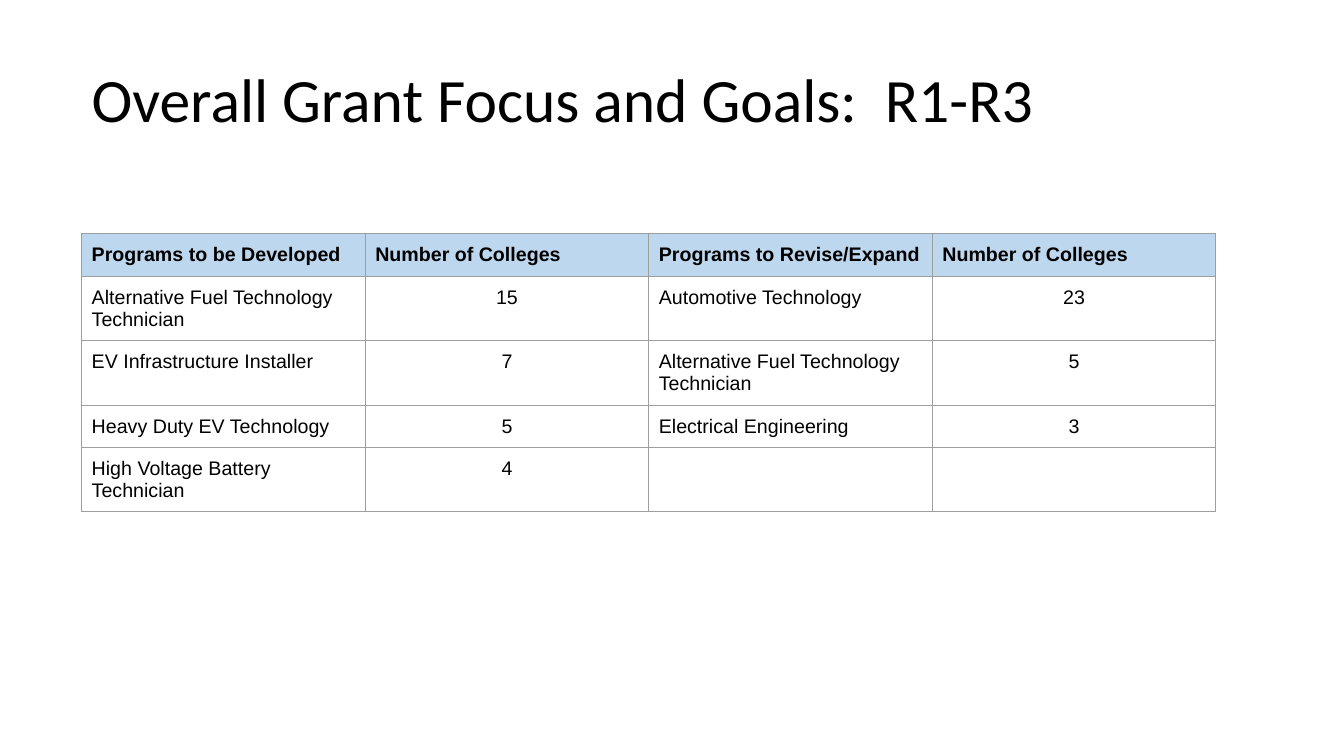
"""Build the grant goals slide: a title above a table of programs."""
from lxml.etree import SubElement
from pptx import Presentation
from pptx.dml.color import RGBColor
from pptx.enum.text import MSO_ANCHOR as Anchor, PP_ALIGN as Align
from pptx.oxml.ns import qn
from pptx.util import Inches, Pt

TITLE = "Overall Grant Focus and Goals:  R1-R3"
ROWS = [
    ("Programs to be Developed", "Number of Colleges",
     "Programs to Revise/Expand", "Number of Colleges"),
    ("Alternative Fuel Technology Technician", "15", "Automotive Technology", "23"),
    ("EV Infrastructure Installer", "7", "Alternative Fuel Technology Technician", "5"),
    ("Heavy Duty EV Technology", "5", "Electrical Engineering", "3"),
    ("High Voltage Battery Technician", "4", "", ""),
]
HEIGHTS = (0.42, 0.64, 0.64, 0.42, 0.64)
LEFT, TOP, WIDTH = 0.81, 2.32, 11.25
BLACK = RGBColor(0x00, 0x00, 0x00)
BLUE = RGBColor(0xBD, 0xD7, 0xEE)
GRAY = RGBColor(0x9E, 0x9E, 0x9E)


def add_run(para, text, font, size, bold=False):
    run = para.add_run()
    run.text = text
    run.font.name = font
    run.font.size = Pt(size)
    run.font.bold = bold
    run.font.color.rgb = BLACK


def add_edges(cell):
    props = cell._tc.get_or_add_tcPr()
    for spot, side in enumerate(("lnL", "lnR", "lnT", "lnB")):
        line = SubElement(props, qn(f"a:{side}"), w=str(Pt(0.75)))
        fill = SubElement(line, qn("a:solidFill"))
        SubElement(fill, qn("a:srgbClr"), val=str(GRAY))
        props.insert(spot, line)


def add_title(slide):
    box = slide.shapes.add_textbox(Inches(LEFT), Inches(0.62), Inches(11.14), Inches(0.79))
    frame = box.text_frame
    frame.word_wrap = True
    frame.vertical_anchor = Anchor.MIDDLE
    para = frame.paragraphs[0]
    para.line_spacing = 0.9
    add_run(para, TITLE, "Calibri", 44)


def fill_cell(cell, text, head, count):
    cell.margin_left = cell.margin_right = Inches(0.1)
    cell.margin_top = cell.margin_bottom = Inches(0.1)
    if head:
        cell.fill.solid()
        cell.fill.fore_color.rgb = BLUE
    else:
        cell.fill.background()
    add_edges(cell)
    para = cell.text_frame.paragraphs[0]
    para.alignment = Align.CENTER if count and not head else Align.LEFT
    if text:
        add_run(para, text, "Arial", 14, head)


def add_goals(slide):
    cols = len(ROWS[0])
    table = slide.shapes.add_table(len(ROWS), cols, Inches(LEFT), Inches(TOP),
                                   Inches(WIDTH), Inches(sum(HEIGHTS))).table
    table.horz_banding = False
    for col in table.columns:
        col.width = Inches(WIDTH / cols)
    for r, (row, high) in enumerate(zip(ROWS, HEIGHTS)):
        table.rows[r].height = Inches(high)
        for c, text in enumerate(row):
            fill_cell(table.cell(r, c), text, r == 0, c % 2 == 1)


def main():
    deck = Presentation()
    deck.slide_width, deck.slide_height = Inches(13.33), Inches(7.5)
    slide = deck.slides.add_slide(deck.slide_layouts[6])
    add_goals(slide)
    add_title(slide)
    deck.save("out.pptx")


if __name__ == "__main__":
    main()
